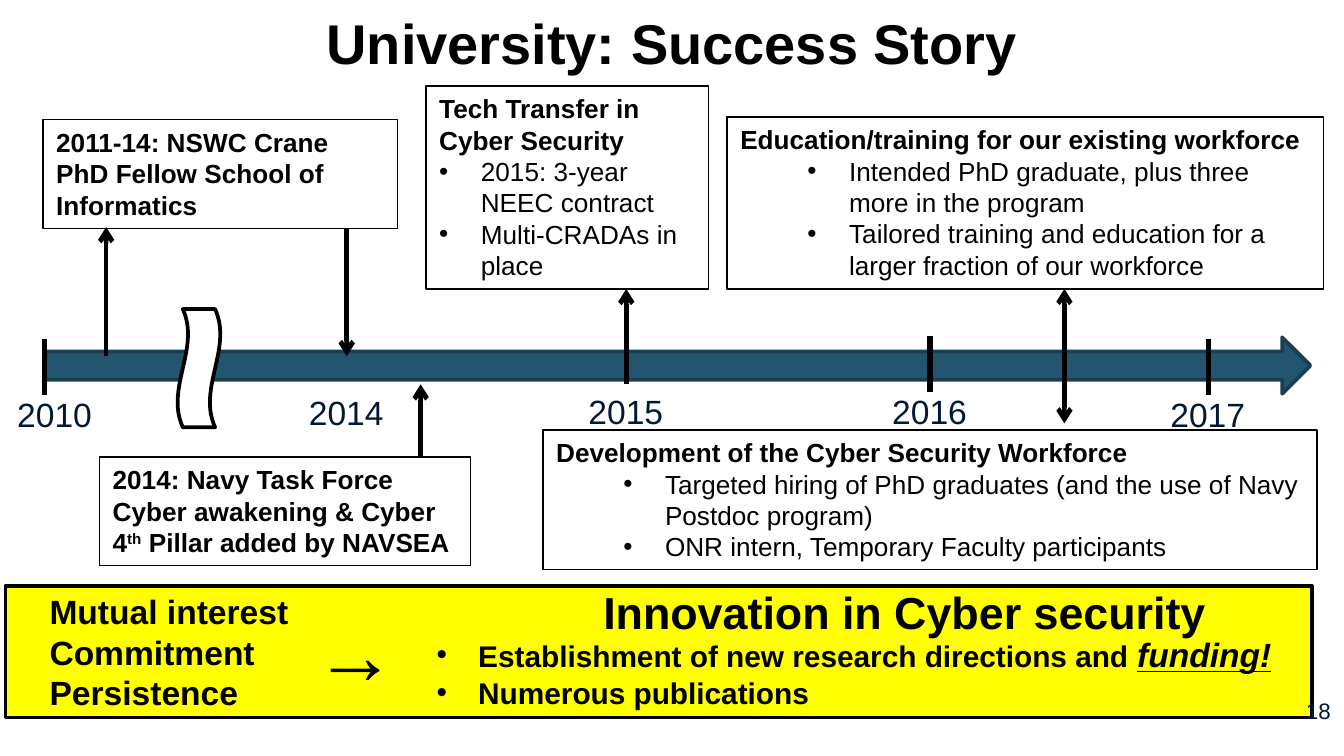
from pptx import Presentation
from pptx.dml.color import RGBColor
from pptx.enum import shapes, text
from pptx.oxml import ns, xmlchemy
from pptx.util import Inches, Pt

BLACK, NAVY = "000000", "021934"
ALIGN = text.PP_ALIGN


def color(hex_string):
    return RGBColor.from_string(hex_string)


def add_element(parent, tag, **attributes):
    element = xmlchemy.OxmlElement(tag)
    for name, value in attributes.items():
        element.set(name, value)
    parent.append(element)
    return element


def style_run(run, size, bold=False, font_color=BLACK):
    run.font.name = "Arial"
    run.font.size = Pt(size)
    run.font.bold = bold
    run.font.color.rgb = color(font_color)


def write(paragraph, words, size, bold=False, font_color=BLACK):
    run = paragraph.add_run()
    run.text = words
    style_run(run, size, bold, font_color)
    return run


def set_bullet(paragraph, margin):
    properties = paragraph._p.get_or_add_pPr()
    properties.set("marL", str(Inches(margin)))
    properties.set("indent", str(Inches(-0.31)))
    add_element(properties, "a:buFont", typeface="Arial")
    add_element(properties, "a:buChar", char="•")


def add_shape(slide, kind, box, line_width, fill=None, line=BLACK):
    shape = slide.shapes.add_shape(kind, *map(Inches, box))
    shape.shadow.inherit = False
    if fill:
        shape.fill.solid()
        shape.fill.fore_color.rgb = color(fill)
    else:
        shape.fill.background()
    shape.line.color.rgb = color(line)
    shape.line.width = Pt(line_width)
    return shape


def add_text(slide, box, words="", size=18, bold=False, font_color=BLACK,
             align=ALIGN.LEFT, wrap=True):
    frame = slide.shapes.add_textbox(*map(Inches, box)).text_frame
    frame.word_wrap = wrap
    paragraph = frame.paragraphs[0]
    paragraph.alignment = align
    if words:
        write(paragraph, words, size, bold, font_color)
    return frame


def add_line(slide, start, end, width=2.5, ends=()):
    connector = slide.shapes.add_connector(
        shapes.MSO_CONNECTOR.STRAIGHT, *map(Inches, start + end))
    connector.line.color.rgb = color(BLACK)
    connector.line.width = Pt(width)
    outline = connector.line._get_or_add_ln()
    for tag in ends:
        add_element(outline, tag, type="arrow")
    add_element(connector._element.find(ns.qn("p:spPr")), "a:effectLst")


def add_title(slide, box, words):
    title = slide.shapes.title
    title.left, title.top, title.width, title.height = map(Inches, box)
    frame = title.text_frame
    frame.text = words
    frame.auto_size = text.MSO_AUTO_SIZE.NONE
    frame.vertical_anchor = text.MSO_ANCHOR.MIDDLE
    frame.paragraphs[0].alignment = ALIGN.CENTER
    style_run(frame.paragraphs[0].runs[0], 30, True)


def add_callout(slide, box, heading, bullets=(), margin=0.81):
    """Outlined box; heading is a list of (words, is superscript)."""
    shape = add_shape(slide, shapes.MSO_SHAPE.RECTANGLE, box, 0.75)
    frame = shape.text_frame
    frame.word_wrap = True
    frame.vertical_anchor = text.MSO_ANCHOR.TOP
    paragraph = frame.paragraphs[0]
    paragraph.alignment = ALIGN.LEFT
    for words, raised in heading:
        run = write(paragraph, words, 14, True)
        if raised:
            run.font._element.set("baseline", "30000")
    for words in bullets:
        paragraph = frame.add_paragraph()
        paragraph.alignment = ALIGN.LEFT
        set_bullet(paragraph, margin)
        write(paragraph, words, 14)


def add_timeline(slide, box):
    left, top, width, height = box
    add_shape(slide, shapes.MSO_SHAPE.RIGHT_ARROW, box, 2, "24556E", "1B3F51")
    # Year labels and tick marks: label centre, label top, tick position
    years = [("2010", 0.08, 0.37, 0), ("2014", 2.25, 0.36, None),
             ("2015", 4.33, 0.35, None), ("2016", 6.59, 0.35, 6.59),
             ("2017", 8.66, 0.37, 8.66)]
    for year, centre, label_top, tick in years:
        add_text(slide, (left + centre - 0.38, top + label_top, 0.76, 0.4),
                 year, font_color=NAVY, wrap=False)
        if tick is not None:
            tick_top = top + label_top - 0.36
            add_line(slide, (left + tick, tick_top),
                     (left + tick, tick_top + 0.42), 2.75)
    # Break in the time axis
    wave = add_shape(slide, shapes.MSO_SHAPE.WAVE,
                     (left + 0.71, top + 0.07, 0.88, 0.32), 2, "FFFFFF")
    wave.rotation = 90


def add_summary(slide, box):
    left, top, width, height = box
    add_shape(slide, shapes.MSO_SHAPE.RECTANGLE, box, 2, "FFFF00")
    add_text(slide, (left + 0.23, top - 0.01, 2.38, 1.01),
             "Mutual interest Commitment Persistence", 18, True)
    add_text(slide, (left + 2.2, top + 0.07, 0.83, 0.84), "→", 44, True)
    add_text(slide, (left + 4.18, top - 0.06, 5.02, 0.5),
             "Innovation in Cyber security", 24, True, align=ALIGN.CENTER)
    # Outcomes
    frame = add_text(slide, (left + 2.61, top + 0.31, 7.12, 0.67))
    research, publications = frame.paragraphs[0], frame.add_paragraph()
    for paragraph in (research, publications):
        set_bullet(paragraph, 0.81)
    write(research, "Establishment of new research directions and ", 16, True)
    funding = write(research, "funding!", 18, True)
    funding.font.italic = funding.font.underline = True
    write(publications, "Numerous publications", 16, True)


def main():
    presentation = Presentation()
    # Widescreen, 16 to 9
    presentation.slide_width = Inches(10)
    presentation.slide_height = Inches(10) * 9 // 16
    slide = presentation.slides.add_slide(presentation.slide_layouts[5])

    add_title(slide, (0, 0, 10, 0.62), "University: Success Story")
    add_summary(slide, (0.04, 4.36, 9.72, 0.98))
    add_timeline(slide, (0.33, 2.51, 9.42, 0.42))

    # Milestones above and below the timeline
    add_callout(slide, (0.32, 0.89, 2.64, 0.81),
                [("2011-14: NSWC Crane PhD Fellow School of Informatics", False)])
    add_callout(slide, (3.17, 0.64, 2.1, 1.51),
                [("Tech Transfer in Cyber Security", False)],
                ["2015: 3-year NEEC contract", "Multi-CRADAs in place"], 0.31)
    add_callout(slide, (5.41, 0.87, 4.44, 1.28),
                [("Education/training for our existing workforce", False)],
                ["Intended PhD graduate, plus three more in the program",
                 "Tailored training and education for a larger fraction of our workforce"])
    add_callout(slide, (0.74, 3.4, 2.76, 0.81),
                [("2014: Navy Task Force Cyber awakening & Cyber 4", False),
                 ("th", True), (" Pillar added by NAVSEA", False)])
    add_callout(slide, (4.04, 3.2, 5.76, 1.04),
                [("Development of the Cyber Security Workforce", False)],
                ["Targeted hiring of PhD graduates (and the use of Navy Postdoc program)",
                 "ONR intern, Temporary Faculty participants"])

    # Arrows between milestones and timeline
    for x, start, end in [(0.79, 2.65, 1.69), (2.58, 1.7, 2.65),
                          (3.13, 3.4, 2.86), (4.66, 2.86, 2.15)]:
        add_line(slide, (x, start), (x, end), ends=["a:tailEnd"])
    add_line(slide, (7.92, 2.15), (7.92, 3.15), ends=["a:headEnd", "a:tailEnd"])

    # Page number
    number = add_text(slide, (9.5, 5.14, 0.5, 0.3), "18", 12,
                      font_color=NAVY, align=ALIGN.RIGHT)
    number.vertical_anchor = text.MSO_ANCHOR.MIDDLE

    presentation.save("out.pptx")


if __name__ == "__main__":
    main()
